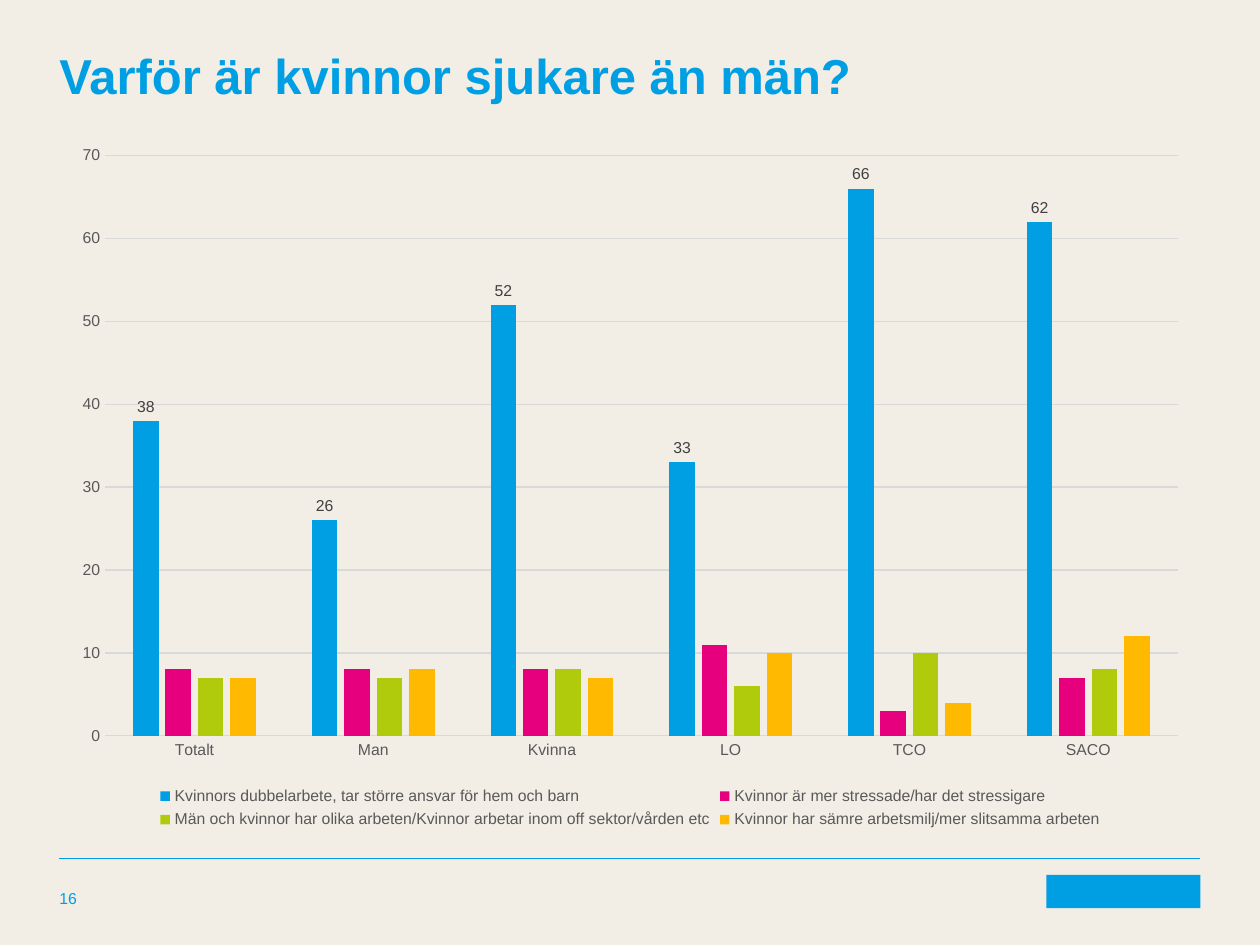
from lxml.etree import SubElement
from pptx import Presentation
from pptx.chart.data import CategoryChartData
from pptx.dml.color import RGBColor
from pptx.enum.chart import (XL_CHART_TYPE as ChartType, XL_LABEL_POSITION as LabelPos,
                             XL_LEGEND_POSITION as LegendPos, XL_TICK_MARK as Tick)
from pptx.enum.shapes import MSO_CONNECTOR as Connector, MSO_SHAPE as Shape
from pptx.enum.text import MSO_ANCHOR as Anchor, MSO_AUTO_SIZE as AutoSize, PP_ALIGN as Align
from pptx.oxml.ns import qn
from pptx.util import Pt

BLUE = RGBColor(0x00, 0x9F, 0xE4)
PINK = RGBColor(0xE6, 0x00, 0x7E)
GREEN = RGBColor(0xB0, 0xCB, 0x0B)
YELLOW = RGBColor(0xFF, 0xB9, 0x00)
BEIGE = RGBColor(0xF2, 0xEE, 0xE6)
GRID_GREY = RGBColor(0xD9, 0xD9, 0xD9)
AXIS_GREY = RGBColor(0x59, 0x59, 0x59)
LABEL_GREY = RGBColor(0x40, 0x40, 0x40)

LEFT, WIDTH = Pt(34), Pt(652)
FRAME = dict(margin_left=0, margin_top=0, margin_right=0, margin_bottom=0,
             word_wrap=True, auto_size=AutoSize.NONE)


def set_font(font, size, color, bold=False):
    for key, value in dict(name="Arial", size=Pt(size), bold=bold).items():
        setattr(font, key, value)
    font.color.rgb = color


def write(shape, text, anchor, size, bold=False):
    frame = shape.text_frame
    for key, value in dict(FRAME, vertical_anchor=anchor).items():
        setattr(frame, key, value)
    paragraph = frame.paragraphs[0]
    paragraph.alignment = Align.LEFT
    run = paragraph.add_run()
    run.text = text
    set_font(run.font, size, BLUE, bold)


prs = Presentation()
prs.slide_width, prs.slide_height = Pt(720), Pt(540)
slide = prs.slides.add_slide(prs.slide_layouts[5])
slide.background.fill.solid()
slide.background.fill.fore_color.rgb = BEIGE

# Title
title = slide.shapes.title
title.left, title.top, title.width, title.height = LEFT, Pt(26), WIDTH, Pt(119)
write(title, "Varför är kvinnor sjukare än män?", Anchor.TOP, 28, bold=True)

# Footer: rule, page number, plain block for the sender mark
rule = slide.shapes.add_connector(Connector.STRAIGHT, LEFT, Pt(490.5), LEFT + WIDTH, Pt(490.5))
rule.line.color.rgb = BLUE
rule.line.width = Pt(0.5)
SubElement(rule._element.spPr, qn("a:effectLst"))

page_number = slide.shapes.add_textbox(LEFT, Pt(500), Pt(170), Pt(18.5))
write(page_number, "16", Anchor.BOTTOM, 9)

sender = slide.shapes.add_shape(Shape.RECTANGLE, Pt(598), Pt(500), Pt(88), Pt(19))
sender.shadow.inherit = False
sender.fill.solid()
sender.fill.fore_color.rgb = BLUE
sender.line.fill.background()

# Chart data: reasons by group
reasons = [
    ("Kvinnors dubbelarbete, tar större ansvar för hem och barn", BLUE, (38, 26, 52, 33, 66, 62)),
    ("Kvinnor är mer stressade/har det stressigare", PINK, (8, 8, 8, 11, 3, 7)),
    ("Män och kvinnor har olika arbeten/Kvinnor arbetar inom off sektor/vården etc",
     GREEN, (7, 7, 8, 6, 10, 8)),
    ("Kvinnor har sämre arbetsmilj/mer slitsamma arbeten", YELLOW, (7, 8, 7, 10, 4, 12)),
]
data = CategoryChartData(number_format="0")
data.categories = ["Totalt", "Man", "Kvinna", "LO", "TCO", "SACO"]
for reason, _, shares in reasons:
    data.add_series(reason, shares)

chart = slide.shapes.add_chart(ChartType.COLUMN_CLUSTERED, LEFT, Pt(77), WIDTH, Pt(399.5),
                               data).chart
chart.has_title = False
set_font(chart.font, 9, AXIS_GREY)

# Columns
plot = chart.plots[0]
for key, value in dict(gap_width=219, overlap=-27, vary_by_categories=False).items():
    setattr(plot, key, value)
for series, (_, color, _) in zip(plot.series, reasons):
    series.format.fill.solid()
    series.format.fill.fore_color.rgb = color
    series.invert_if_negative = False

# Values above the first reason only
labels = plot.series[0].data_labels
for key, value in dict(show_value=True, position=LabelPos.OUTSIDE_END,
                       number_format="0", number_format_is_linked=False).items():
    setattr(labels, key, value)
set_font(labels.font, 9, LABEL_GREY)

# Axes
groups, share = chart.category_axis, chart.value_axis
for axis in (groups, share):
    axis.major_tick_mark = axis.minor_tick_mark = Tick.NONE
    set_font(axis.tick_labels.font, 9, AXIS_GREY)
for key, value in dict(minimum_scale=0, maximum_scale=70, major_unit=10,
                       has_major_gridlines=True).items():
    setattr(share, key, value)
share.tick_labels.number_format = "0"
share.tick_labels.number_format_is_linked = False
share.format.line.fill.background()
for line in (groups.format.line, share.major_gridlines.format.line):
    line.color.rgb = GRID_GREY
    line.width = Pt(0.75)

# Legend
chart.has_legend = True
chart.legend.position = LegendPos.BOTTOM
chart.legend.include_in_layout = False
set_font(chart.legend.font, 9, AXIS_GREY)

# Inner plot area as fractions of the chart
plot_area = chart._chartSpace.chart.plotArea
for old in plot_area.findall(qn("c:layout")):
    plot_area.remove(old)
layout = SubElement(plot_area, qn("c:layout"))
plot_area.insert(0, layout)
manual = SubElement(layout, qn("c:manualLayout"))
for tag, value in dict(layoutTarget="inner", xMode="edge", yMode="edge",
                       x=0.04, y=0.03, w=0.94, h=0.83).items():
    SubElement(manual, qn(f"c:{tag}")).set("val", str(value))

prs.save("out.pptx")
